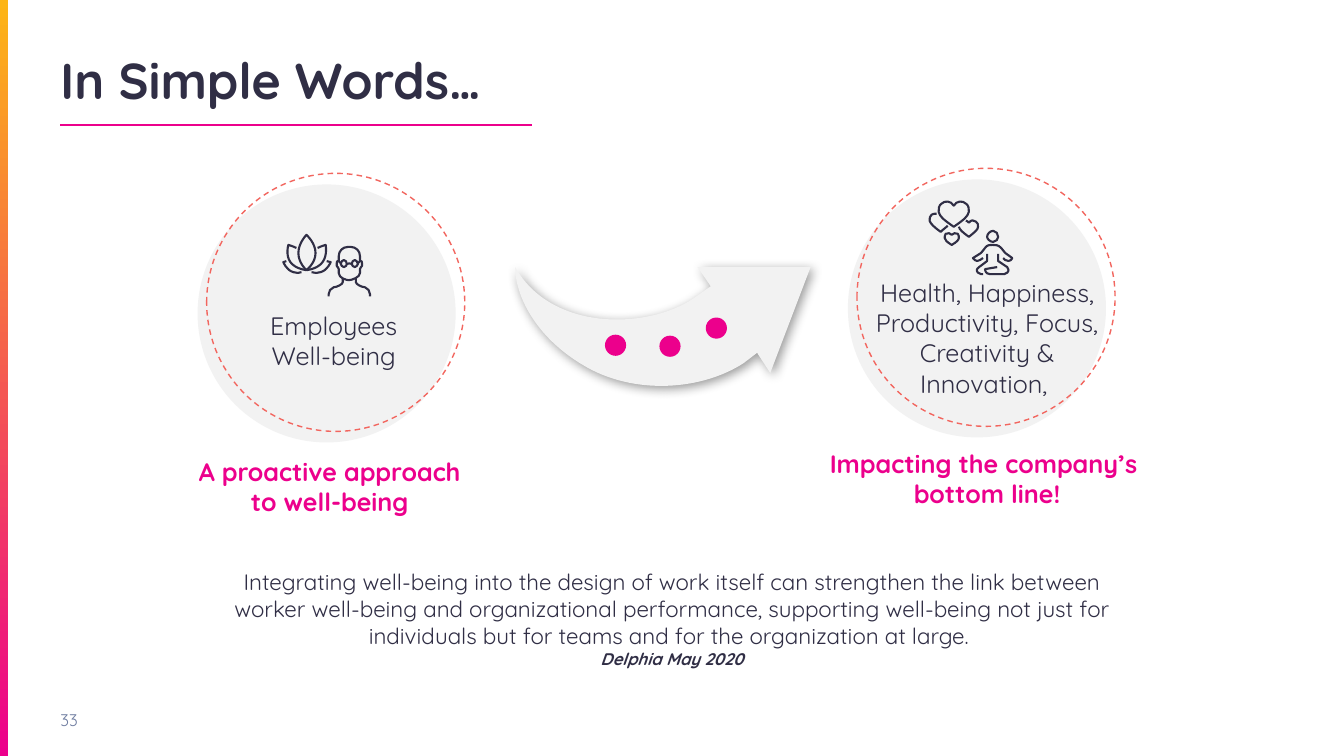
from lxml.etree import SubElement
from pptx import Presentation
from pptx.dml.color import RGBColor
from pptx.enum.dml import MSO_LINE_DASH_STYLE as Dash
from pptx.enum.shapes import MSO_CONNECTOR as Connector, MSO_SHAPE as Shape
from pptx.enum.text import MSO_ANCHOR as Anchor, MSO_AUTO_SIZE as AutoSize, PP_ALIGN as Align
from pptx.oxml.ns import qn
from pptx.util import Pt

PX = 9144  # one px is a hundredth of an inch
FONT = "Quicksand"
COLORS = {
    "ink": "302E45", "pink": "EC008C", "amber": "FDB515",
    "coral": "F2665F", "pale": "F2F2F2", "slate": "6E7CA0",
}
CIRCLE, DOT = 256, 21

# Outlines: M start, L line, C cubic curve, Z close; coordinates in px
ARROW = ("M 804 265 L 764 370 L 751 350 L 738 360 C 697 387 629 393 578 362 "
         "C 531 334 511 293 511 265 C 547 329 642 327 688 296 L 705 284 L 692 265 Z")
PERSON = [
    "M 340 276 C 340 276 340 279 340 280 C 340 282 334 285 331 285 C 328 286 326 289 326 292 L 326 294",
    "M 353 276 C 353 276 353 279 353 280 C 353 282 359 285 362 285 C 365 286 367 289 367 292 L 367 294",
    "M 357 254 L 357 259 L 358 259 C 359 259 359 260 359 261 L 359 264 C 359 264 359 265 358 265 "
    "L 357 267 C 357 267 357 270 357 271 C 357 275 349 278 346 278 C 344 278 336 276 336 271 "
    "C 336 270 336 267 336 267 L 335 265 C 334 265 334 264 334 264 L 334 261 C 334 260 334 259 335 259 "
    "L 336 259 L 336 254 C 336 249 340 245 345 245 L 348 245 C 353 245 357 249 357 254 Z",
    "M 336 259 L 338 261",
    "M 357 259 L 355 261",
    "M 344 262 C 344 263 343 265 341 265 C 340 265 338 263 338 262 C 338 260 340 258 341 258 C 343 258 344 260 344 262 Z",
    "M 355 262 C 355 263 353 265 352 265 C 350 265 349 263 349 262 C 349 260 350 258 352 258 C 353 258 355 260 355 262 Z",
    "M 344 262 C 345 261 348 261 349 262",
]
LOTUS = [
    "M 313 251 C 313 261 304 268 304 268 C 304 268 296 261 296 251 C 296 241 304 233 304 233 C 304 233 313 241 313 251 Z",
    "M 315 246 C 319 244 323 243 323 243 C 323 243 325 253 320 260 C 315 267 304 268 304 268",
    "M 324 259 C 327 260 328 260 328 260 C 328 260 325 268 318 270 C 315 271 312 271 309 270",
    "M 294 246 C 290 244 286 243 286 243 C 286 243 283 253 288 260 C 293 267 304 268 304 268",
    "M 284 259 C 282 260 281 260 281 260 C 281 260 284 268 291 270 C 294 271 297 271 299 270",
]
MEDITATION = [
    "M 989 265 L 977 267 C 977 267 977 272 982 272 C 986 272 993 272 996 272 C 999 272 1000 269 1000 269 "
    "C 1000 269 1001 267 999 265 C 996 263 990 259 990 259 L 990 252",
    "M 975 256 L 972 258 C 968 261 965 256 965 256 L 973 251 L 977 246 C 979 243 981 243 985 243 "
    "C 988 243 990 243 993 246 L 997 251 L 1004 256 C 1004 256 1002 261 997 258 L 995 256",
    "M 990 235 C 990 237 988 240 985 240 C 982 240 979 237 979 235 C 979 232 982 229 985 229 C 988 229 990 232 990 235 Z",
    "M 975 272 C 975 272 974 272 973 272 C 970 272 969 269 969 269 C 969 269 968 267 971 265 C 974 263 979 259 979 259 L 979 252",
]
HEARTS = [
    "M 946 225 C 956 218 960 215 961 210 C 961 207 961 204 958 202 C 955 199 949 199 946 204 "
    "C 943 199 937 199 934 202 C 931 204 931 207 931 210 C 932 215 936 218 946 225 Z",
    "M 929 212 C 927 212 925 212 924 213 C 922 214 922 217 922 219 C 923 222 926 225 933 230 C 936 227 938 226 940 224",
    "M 951 225 C 952 228 954 230 961 235 C 967 230 970 228 970 225 C 970 223 970 221 968 220 "
    "C 966 218 963 218 961 221 C 960 220 959 219 958 219",
    "M 950 232 C 948 231 945 231 944 233 C 943 231 940 231 938 232 C 937 233 937 235 937 236 "
    "C 937 238 939 240 944 243 C 949 240 951 238 951 236 C 951 235 951 233 950 232 Z",
]


def color(name):
    return RGBColor.from_string(COLORS[name])


def px(*lengths):
    return [length * PX for length in lengths]


def paint(shape, fill=None, line=None, width=1):
    shape.shadow.inherit = False
    if fill:
        shape.fill.solid()
        shape.fill.fore_color.rgb = color(fill)
    else:
        shape.fill.background()
    if line:
        shape.line.color.rgb = color(line)
        shape.line.width = Pt(width)
    else:
        shape.line.fill.background()
    return shape


def add_circle(shapes, left, top, size, **style):
    return paint(shapes.add_shape(Shape.OVAL, *px(left, top, size, size)), **style)


def add_outline(shapes, outline, **style):
    """Build an outline from its points, then join control points into curves."""
    closed = outline.endswith("Z")
    points, kinds = [], []
    for token in outline.split():
        if token.isdigit():
            points.append(int(token))
        elif token != "Z":
            kinds.append(token)
    pairs = list(zip(points[::2], points[1::2]))
    builder = shapes.build_freeform(*pairs[0], scale=PX)
    builder.add_line_segments(pairs[1:], close=closed)
    shape = builder.convert_to_shape()
    segments = iter(list(shape._element.iter(qn("a:lnTo"))))
    for kind in kinds[1:]:
        first = next(segments)
        if kind == "C":
            first.tag = qn("a:cubicBezTo")
            for _ in range(2):
                control = next(segments)
                first.append(control[0])
                control.getparent().remove(control)
    return paint(shape, **style)


def add_icon(page, outlines):
    icon = page.shapes.add_group_shape()
    for outline in outlines:
        add_outline(icon.shapes, outline, line="ink", width=1.5)


def format_para(para, size, ink, bold=False, italic=False, align=Align.CENTER):
    para.alignment = align
    font = para.font
    font.name, font.size, font.bold, font.italic = FONT, Pt(size), bold, italic
    font.color.rgb = color(ink)


def add_text(page, place, text, size, ink="ink", **style):
    box = page.shapes.add_textbox(*px(*place))
    frame = box.text_frame
    frame.word_wrap = True
    frame.auto_size = AutoSize.SHAPE_TO_FIT_TEXT
    para = frame.paragraphs[0]
    para.text = text
    format_para(para, size, ink, **style)
    return frame


def add_badge(page, left, top):
    badge = page.shapes.add_group_shape()
    add_circle(badge.shapes, left, top, CIRCLE, fill="pale")
    ring = add_circle(badge.shapes, left + 9, top - 11, CIRCLE, line="coral")
    ring.line.dash_style = Dash.DASH


def add_shadow(shape):
    effects = shape._element.spPr.find(qn("a:effectLst"))
    shadow = SubElement(effects, qn("a:outerShdw"), blurRad=str(Pt(8)), dist=str(Pt(3)),
                        dir="2700000", algn="tl", rotWithShape="0")
    black = SubElement(shadow, qn("a:srgbClr"), val="000000")
    SubElement(black, qn("a:alpha"), val="40000")


def add_frame(page):
    # Gradient strip on the left edge
    strip = paint(page.shapes.add_shape(Shape.RECTANGLE, *px(0, 0, 8, 750)))
    strip.fill.gradient()
    strip.fill.gradient_angle = 270
    for stop, name in zip(strip.fill.gradient_stops, ("amber", "pink")):
        stop.color.rgb = color(name)

    # Title and its rule
    title = page.shapes.title
    title.left, title.top, title.width, title.height = px(60, 49, 1213, 61)
    frame = title.text_frame
    frame.margin_left = frame.margin_top = frame.margin_right = frame.margin_bottom = 0
    frame.vertical_anchor = Anchor.TOP
    frame.text = "In Simple Words…"
    format_para(frame.paragraphs[0], 36, "ink", bold=True, align=Align.LEFT)
    rule = page.shapes.add_connector(Connector.STRAIGHT, *px(60, 124, 528, 124))
    rule.line.color.rgb = color("pink")
    rule.line.width = Pt(1.5)
    SubElement(rule._element.spPr, qn("a:effectLst"))

    # Page number
    number = add_text(page, (60, 694, 69, 40), "33", 12, "slate", align=Align.LEFT)
    number.auto_size = AutoSize.NONE
    number.margin_left = 0
    number.vertical_anchor = Anchor.MIDDLE


def main():
    deck = Presentation()
    deck.slide_width, deck.slide_height = px(1333, 750)
    page = deck.slides.add_slide(deck.slide_layouts[5])
    add_frame(page)

    # Captions and closing quote
    add_text(page, (735, 440, 488, 71), "Impacting the company’s \nbottom line!", 18, "pink", bold=True)
    add_text(page, (175, 448, 304, 71), "A proactive approach to well-being", 18, "pink", bold=True)
    quote = add_text(page, (208, 559, 917, 138),
                     "Integrating well-being into the design of work itself can strengthen the link "
                     "between worker well-being and organizational performance, supporting well-being "
                     "not just for individuals but for teams and for the organization at large. ", 16)
    credit = quote.add_paragraph()
    credit.text = "Delphia May 2020"
    format_para(credit, 12, "ink", bold=True, italic=True)

    # Curved arrow with three dots
    add_shadow(add_outline(page.shapes, ARROW, fill="pale"))
    for left, top in ((700, 315), (654, 333), (600, 332)):
        add_circle(page.shapes, left, top, DOT, fill="pink")

    # Cause on the left, effect on the right
    add_badge(page, 196, 183)
    add_text(page, (232, 303, 198, 71), "Employees Well-being", 18)
    add_icon(page, PERSON + LOTUS)
    add_badge(page, 841, 178)
    add_text(page, (839, 270, 280, 131),
             "Health, Happiness, Productivity, Focus,\nCreativity & Innovation, ", 18)
    add_icon(page, MEDITATION + HEARTS)

    deck.save("out.pptx")


if __name__ == "__main__":
    main()
